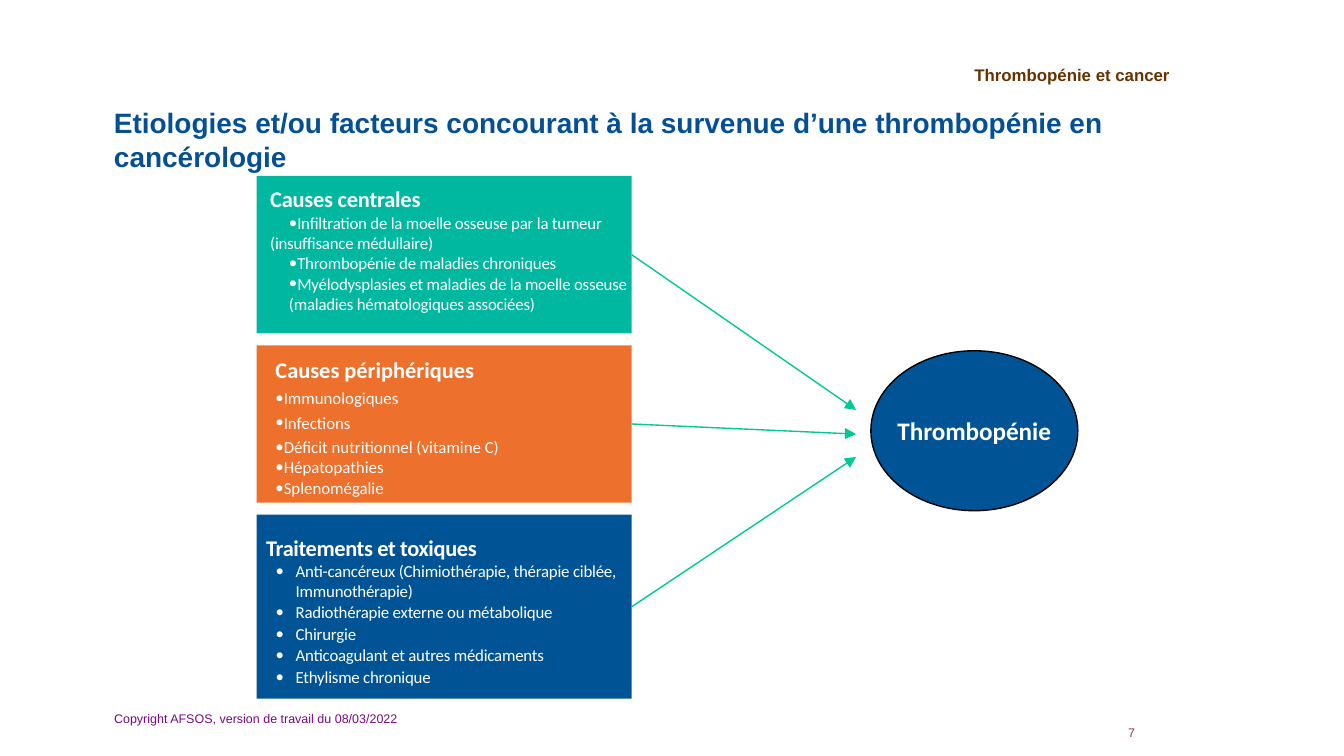
from lxml import etree
from pptx import Presentation
from pptx.dml.color import RGBColor
from pptx.enum.shapes import MSO_CONNECTOR, MSO_SHAPE
from pptx.enum.text import MSO_ANCHOR, PP_ALIGN
from pptx.oxml.ns import qn
from pptx.util import Inches, Pt

RECT, OVAL = MSO_SHAPE.RECTANGLE, MSO_SHAPE.OVAL
STRAIGHT = MSO_CONNECTOR.STRAIGHT
LEFT, CENTER, RIGHT = PP_ALIGN.LEFT, PP_ALIGN.CENTER, PP_ALIGN.RIGHT
TOP, MIDDLE = MSO_ANCHOR.TOP, MSO_ANCHOR.MIDDLE
RIGHT_SIDE = 3

WHITE, BLACK = "FFFFFF", "000000"
GREEN, ORANGE, BLUE, MINT = "00B7A0", "ED702D", "005394", "00C896"


def rgb(code):
    return RGBColor.from_string(code)


class Board:
    head, body = "Arial", "Calibri"
    left, width = 1.91, 2.79

    def __init__(self, slide):
        self.slide = slide

    def style(self, para, size, color, font, bold=False, align=LEFT, track=0):
        """Set the look of a whole paragraph; track is in hundredths of a point."""
        para.alignment = align
        face = para.font
        face.size, face.bold, face.name = Pt(size), bold, font
        face.color.rgb = rgb(color)
        if track:
            face._element.set("spc", str(track))

    def frame(self, shape, insets, anchor):
        frame = shape.text_frame
        frame.word_wrap = True
        frame.vertical_anchor = anchor
        (frame.margin_left, frame.margin_top,
         frame.margin_right, frame.margin_bottom) = map(Inches, insets)
        return frame

    def label(self, text, box, size, color, insets=(0.1, 0.05, 0.1, 0.05),
              anchor=MIDDLE, **look):
        shape = self.slide.shapes.add_textbox(*map(Inches, box))
        para = self.frame(shape, insets, anchor).paragraphs[0]
        para.text = text
        self.style(para, size, color, self.head, **look)

    def shape(self, kind, box, fill, edge=None):
        shape = self.slide.shapes.add_shape(kind, *map(Inches, box))
        shape.shadow.inherit = False
        shape.fill.solid()
        shape.fill.fore_color.rgb = rgb(fill)
        if edge:
            shape.line.color.rgb = rgb(edge)
            shape.line.width = Pt(0.75)
        else:
            shape.line.fill.background()
        return shape

    def panel(self, top, height, fill, inset, title, items, tracks=(0, 0)):
        """Add a box with a (text, indents, line) title and bullet items.

        An item is (text, bullet, indents, space before, line spacing).
        """
        panel = self.shape(RECT, (self.left, top, self.width, height), fill)
        frame = self.frame(panel, (*inset, 0, 0), TOP)
        text, indents, line = title
        rows = [(text, False, indents, 0, line)] + items
        for i, (text, bullet, indents, before, line) in enumerate(rows):
            para = frame.paragraphs[0] if i == 0 else frame.add_paragraph()
            para.text = text
            props = para._p.get_or_add_pPr()
            margin, first = map(Inches, indents)
            props.set("marL", str(margin))
            props.set("indent", str(first))
            if bullet:
                etree.SubElement(props, qn("a:buFont"), typeface=self.body)
                etree.SubElement(props, qn("a:buChar"), char="•")
            if before:
                para.space_before = Pt(before)
            if line:
                para.line_spacing = Pt(line)
            self.style(para, 9 if i else 12, WHITE, self.body,
                       bold=i == 0, track=tracks[min(i, 1)])
        return panel

    def oval(self, text, box, size):
        shape = self.shape(OVAL, box, BLUE, BLACK)
        frame = self.frame(shape, (0, 0, 0, 0), MIDDLE)
        frame.word_wrap = False
        para = frame.paragraphs[0]
        para.text = text
        self.style(para, size, WHITE, self.body, bold=True, align=CENTER)

    def arrow(self, panel, x, y):
        """Draw an arrow from the right side of a panel to a point."""
        end = Inches(x), Inches(y)
        link = self.slide.shapes.add_connector(STRAIGHT, *end, *end)
        link.begin_connect(panel, RIGHT_SIDE)
        link.line.color.rgb = rgb(MINT)
        link.line.width = Pt(0.75)
        etree.SubElement(link.line._get_or_add_ln(), qn("a:tailEnd"),
                         type="triangle")
        etree.SubElement(link._element.spPr, qn("a:effectLst"))


def main():
    deck = Presentation()
    deck.slide_width, deck.slide_height = Inches(10), Inches(10 * 9 / 16)
    board = Board(deck.slides.add_slide(deck.slide_layouts[6]))

    board.label("Thrombopénie et cancer", (5.87, 0.33, 2.93, 0.45), 9,
                "663300", bold=True, align=RIGHT)
    board.label("Etiologies et/ou facteurs concourant à la survenue "
                "d’une thrombopénie en cancérologie",
                (0.75, 0.69, 8.5, 0.69), 15, "055095", bold=True)

    deep, flat, hang = (0.08, 0.14), (0.01, 0.08), (0.22, -0.15)
    central = board.panel(
        1.31, 1.17, GREEN, (0.02, 0.07),
        ("Causes centrales", (0.08, 0), None),
        [("Infiltration de la moelle osseuse par la tumeur "
          "(insuffisance médullaire)", True, deep, 0.6, 10.6),
         ("Thrombopénie de maladies chroniques", True, deep, 0, None),
         ("Myélodysplasies et maladies de la moelle osseuse",
          True, deep, 0, None),
         ("(maladies hématologiques associées)",
          False, (0.22, 0), 0, None)],
        tracks=(-10, -10))

    outer = board.panel(
        2.57, 1.17, ORANGE, (0.05, 0.08),
        ("Causes périphériques", flat, None),
        [(text, True, flat, before, None) for text, before in (
            ("Immunologiques", 2.4),
            ("Infections", 2.4),
            ("Déficit nutritionnel (vitamine C)", 2.4),
            ("Hépatopathies", 0),
            ("Splenomégalie", 0))])

    toxic = board.panel(
        3.83, 1.37, BLUE, (0.07, 0.12),
        ("Traitements et toxiques", (0.22, -0.22), 16.1),
        [("Anti-cancéreux (Chimiothérapie, thérapie ciblée, "
          "Immunothérapie)", True, hang, 0, 10.7)]
        + [(text, True, hang, 0.7, None) for text in (
            "Radiothérapie externe ou métabolique",
            "Chirurgie",
            "Anticoagulant et autres médicaments",
            "Ethylisme chronique")],
        tracks=(-20, -10))

    board.oval("Thrombopénie", (6.48, 2.61, 1.54, 1.19), 13.5)
    for panel, y in ((central, 3.05), (outer, 3.23), (toxic, 3.4)):
        board.arrow(panel, 6.37, y)

    board.label("Copyright AFSOS, version de travail du 08/03/2022",
                (0.75, 5.2, 3.38, 0.3), 6.75, "770980")
    board.label("7", (8.26, 5.39, 0.32, 0.12), 6.75, "863966",
                insets=(0, 0, 0, 0), anchor=TOP, align=CENTER)

    deck.save("out.pptx")


if __name__ == "__main__":
    main()
